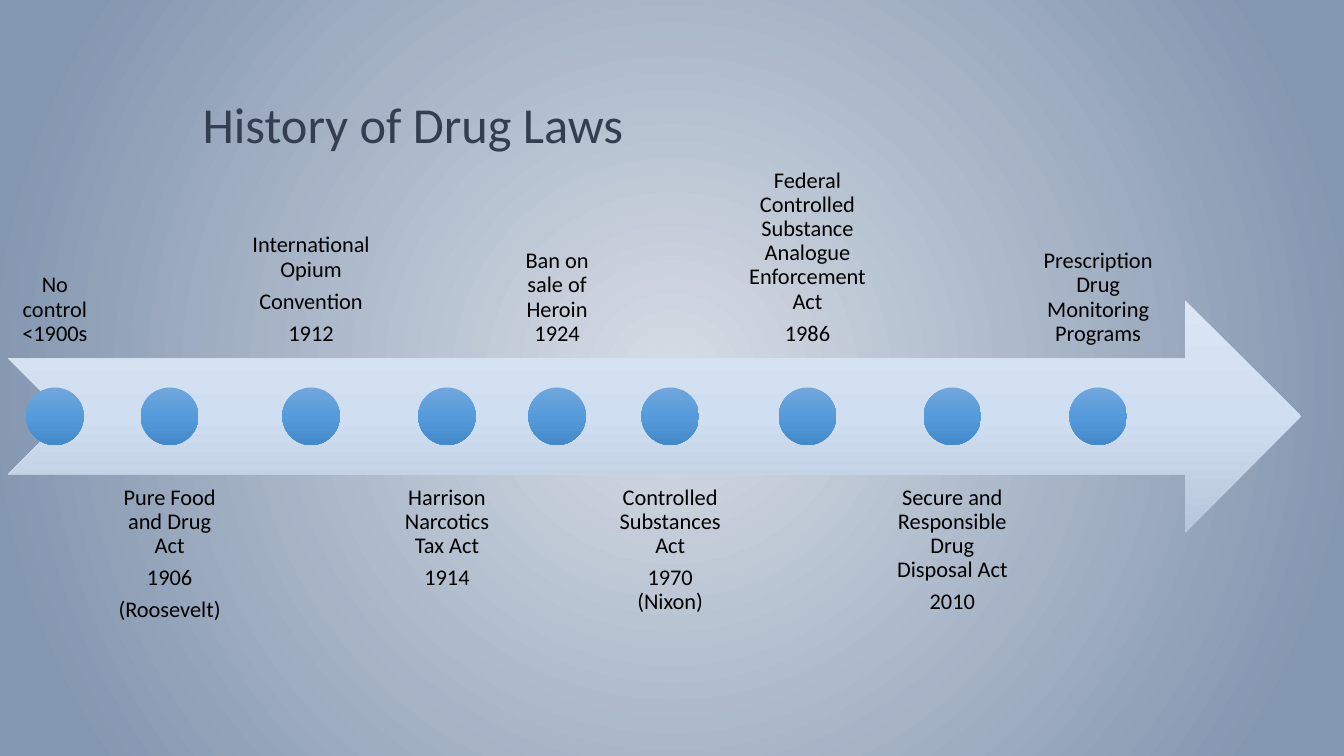
from pptx import Presentation
from pptx.dml.color import RGBColor
from pptx.enum.shapes import MSO_SHAPE
from pptx.enum.text import MSO_ANCHOR, PP_ALIGN
from pptx.oxml import parse_xml
from pptx.oxml.ns import nsdecls, qn
from pptx.util import Cm, Pt

COLORS = {
    "title": "333F50",
    "label": "000000",
    "backdrop": ["D6DCE5", "8497B0"],
    "arrow": ["DBE5F3", "D0DEF1", "B6C5D9"],
    "dot": ["71A6DB", "559BDB", "448ACA"],
}
FONT = "Calibri"
DOWNWARD = '<a:lin ang="5400000" scaled="0"/>'
FROM_CENTRE = ('<a:path path="circle">'
               '<a:fillToRect l="50000" t="50000" r="50000" b="50000"/></a:path>')

# Label width in cm, then its paragraphs; labels alternate above and below the arrow
EVENTS = [
    (2.31, ["No control <1900s"]),
    (3.33, ["Pure Food and Drug Act", "1906", "(Roosevelt)"]),
    (3.66, ["International Opium", "Convention", "1912"]),
    (3.05, ["Harrison Narcotics Tax Act", "1914"]),
    (2.36, ["Ban on sale of Heroin 1924"]),
    (3.2, ["Controlled Substances Act", "1970 (Nixon)"]),
    (3.58, ["Federal Controlled Substance Analogue Enforcement Act", "1986"]),
    (3.58, ["Secure and Responsible Drug Disposal Act", "2010"]),
    (3.63, ["Prescription Drug Monitoring Programs"]),
]
LABEL_GAP = 0.07
BAND_HEIGHT = 5.84
ABOVE_TOP, ARROW_TOP, BELOW_TOP = 3.18, 7.57, 11.94
DOT_SIZE = 1.45


def set_gradient(fill, owner, colors, positions, direction):
    """Give the owner's fill these colour stops (positions in percent)."""
    fill.gradient()
    gradient = owner.find(".//" + qn("a:gradFill"))
    for child in list(gradient):
        gradient.remove(child)
    stops = "".join(
        f'<a:gs pos="{position * 1000}"><a:srgbClr val="{color}"/></a:gs>'
        for color, position in zip(colors, positions))
    holder = parse_xml(
        f'<a:gradFill {nsdecls("a")}><a:gsLst>{stops}</a:gsLst>{direction}</a:gradFill>')
    gradient.extend(list(holder))


def add_text(para, text, size, color):
    para.line_spacing = 0.9
    span = para.add_run()
    span.text = text
    span.font.name = FONT
    span.font.size = Pt(size)
    span.font.color.rgb = RGBColor.from_string(color)


deck = Presentation()
deck.slide_width, deck.slide_height = Cm(33.87), Cm(19.05)
page = deck.slides.add_slide(deck.slide_layouts[5])
set_gradient(page.background.fill, page._element, COLORS["backdrop"], [0, 90], FROM_CENTRE)

title = page.shapes.title
title.left, title.top, title.width, title.height = Cm(4.85), Cm(1.9), Cm(11.63), Cm(2.11)
title.text_frame.vertical_anchor = MSO_ANCHOR.BOTTOM
title_para = title.text_frame.paragraphs[0]
title_para.alignment = PP_ALIGN.LEFT
add_text(title_para, "History of Drug Laws", 36, COLORS["title"])

arrow = page.shapes.add_shape(
    MSO_SHAPE.NOTCHED_RIGHT_ARROW, Cm(0.2), Cm(ARROW_TOP), Cm(32.59), Cm(BAND_HEIGHT))
arrow.shadow.inherit = False
arrow.line.fill.background()
set_gradient(arrow.fill, arrow._element, COLORS["arrow"], [0, 50, 100], DOWNWARD)

left = 0.23
dot_top = ARROW_TOP + (BAND_HEIGHT - DOT_SIZE) / 2
for index, (width, lines) in enumerate(EVENTS):
    above = index % 2 == 0
    label = page.shapes.add_textbox(
        Cm(left), Cm(ABOVE_TOP if above else BELOW_TOP), Cm(width), Cm(BAND_HEIGHT))
    frame = label.text_frame
    frame.word_wrap = True
    frame.vertical_anchor = MSO_ANCHOR.BOTTOM if above else MSO_ANCHOR.TOP
    frame.margin_left = frame.margin_right = Cm(0.3)
    frame.margin_top = frame.margin_bottom = Cm(0.3)
    for number, line in enumerate(lines):
        para = frame.add_paragraph() if number else frame.paragraphs[0]
        para.alignment = PP_ALIGN.CENTER
        para.space_after = Pt(5.6)
        add_text(para, line, 16, COLORS["label"])

    dot = page.shapes.add_shape(
        MSO_SHAPE.OVAL, Cm(left + (width - DOT_SIZE) / 2), Cm(dot_top),
        Cm(DOT_SIZE), Cm(DOT_SIZE))
    dot.shadow.inherit = False
    dot.line.fill.background()
    set_gradient(dot.fill, dot._element, COLORS["dot"], [0, 50, 100], DOWNWARD)
    left += width + LABEL_GAP

deck.save("out.pptx")
